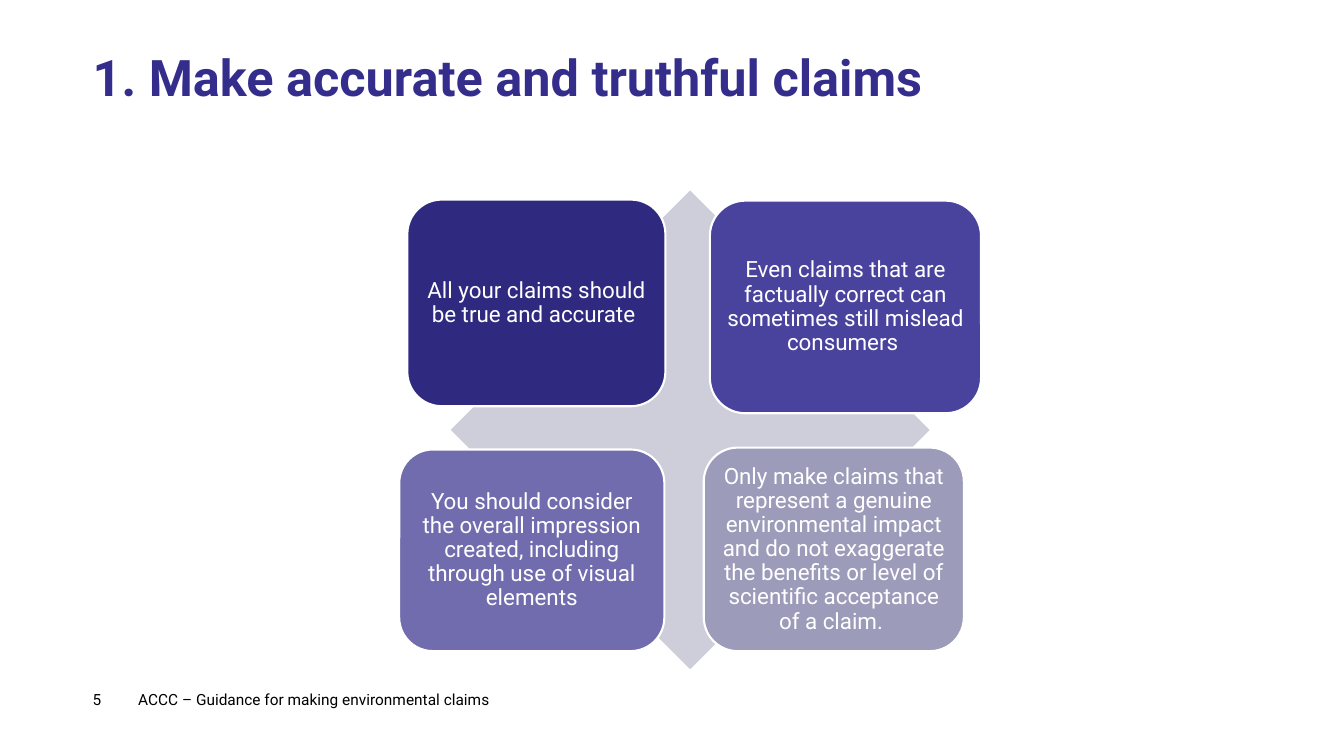
from pptx import Presentation
from pptx import util as u
from pptx.dml.color import RGBColor
from pptx.enum import shapes, text

COLORS = {
    "title": "342D8C",
    "diamond": "CECDDA",
    "accurate": "2F297F",
    "mislead": "49439E",
    "impression": "706CAE",
    "genuine": "9C9BB9",
    "white": "FFFFFF",
    "black": "000000",
}

# Colour name, (left, top, width, height) in inches, wording
CLAIMS = [
    ("accurate", (4.04, 1.98, 2.56, 2.05),
     "All your claims should be true and accurate "),
    ("mislead", (7.04, 1.99, 2.69, 2.11),
     "Even claims that are factually correct can sometimes still mislead consumers "),
    ("impression", (3.96, 4.46, 2.63, 2),
     "You should consider the overall impression created, "
     "including through use of visual elements"),
    ("genuine", (6.98, 4.44, 2.58, 2.02),
     "Only make claims that represent a genuine environmental impact and do not "
     "exaggerate the benefits or level of scientific acceptance of a claim. "),
]


def rgb(name):
    return RGBColor.from_string(COLORS[name])


def inches(box):
    return [u.Inches(v) for v in box]


def write(sp, words, size=11, color="black", bold=False, align=text.PP_ALIGN.LEFT,
          anchor=text.MSO_ANCHOR.MIDDLE, inset=0, spacing=1.0, after=0):
    tf = sp.text_frame
    tf.word_wrap = True
    tf.vertical_anchor = anchor
    tf.margin_left = tf.margin_right = u.Inches(inset)
    tf.margin_top = tf.margin_bottom = u.Inches(inset)
    p = tf.paragraphs[0]
    p.alignment = align
    p.line_spacing = spacing
    p.space_after = u.Pt(after)
    r = p.add_run()
    r.text = words
    r.font.name = "Roboto"
    r.font.size = u.Pt(size)
    r.font.bold = bold
    r.font.color.rgb = rgb(color)


def add_text(s, box, words, **fmt):
    write(s.shapes.add_textbox(*inches(box)), words, **fmt)


def add_filled(s, kind, box, fill, line=None):
    sp = s.shapes.add_shape(kind, *inches(box))
    sp.shadow.inherit = False
    sp.fill.solid()
    sp.fill.fore_color.rgb = rgb(fill)
    if line:
        sp.line.color.rgb = rgb(line)
        sp.line.width = u.Pt(1.5)
    else:
        sp.line.fill.background()
    return sp


def add_claim(s, fill, box, words):
    sp = add_filled(s, shapes.MSO_SHAPE.ROUNDED_RECTANGLE, box, fill, line="white")
    write(sp, words, size=16, color="white", align=text.PP_ALIGN.CENTER,
          inset=0.07, spacing=0.9, after=5.6)


def main():
    prs = Presentation()
    prs.slide_width, prs.slide_height = inches((13.33, 7.5))
    s = prs.slides.add_slide(prs.slide_layouts[6])

    add_text(s, (1.37, 6.74, 7.43, 0.4),
             "ACCC – Guidance for making environmental claims", after=6)
    add_text(s, (0.92, 6.74, 0.43, 0.4), "5", after=6)
    add_text(s, (0.92, 0.53, 11.5, 1.14), "1. Make accurate and truthful claims",
             size=36, color="title", bold=True, spacing=0.9,
             anchor=text.MSO_ANCHOR.TOP)

    add_filled(s, shapes.MSO_SHAPE.DIAMOND, (4.47, 1.89, 4.75, 4.75), "diamond")
    for fill, box, words in CLAIMS:
        add_claim(s, fill, box, words)

    prs.save("out.pptx")


if __name__ == "__main__":
    main()
